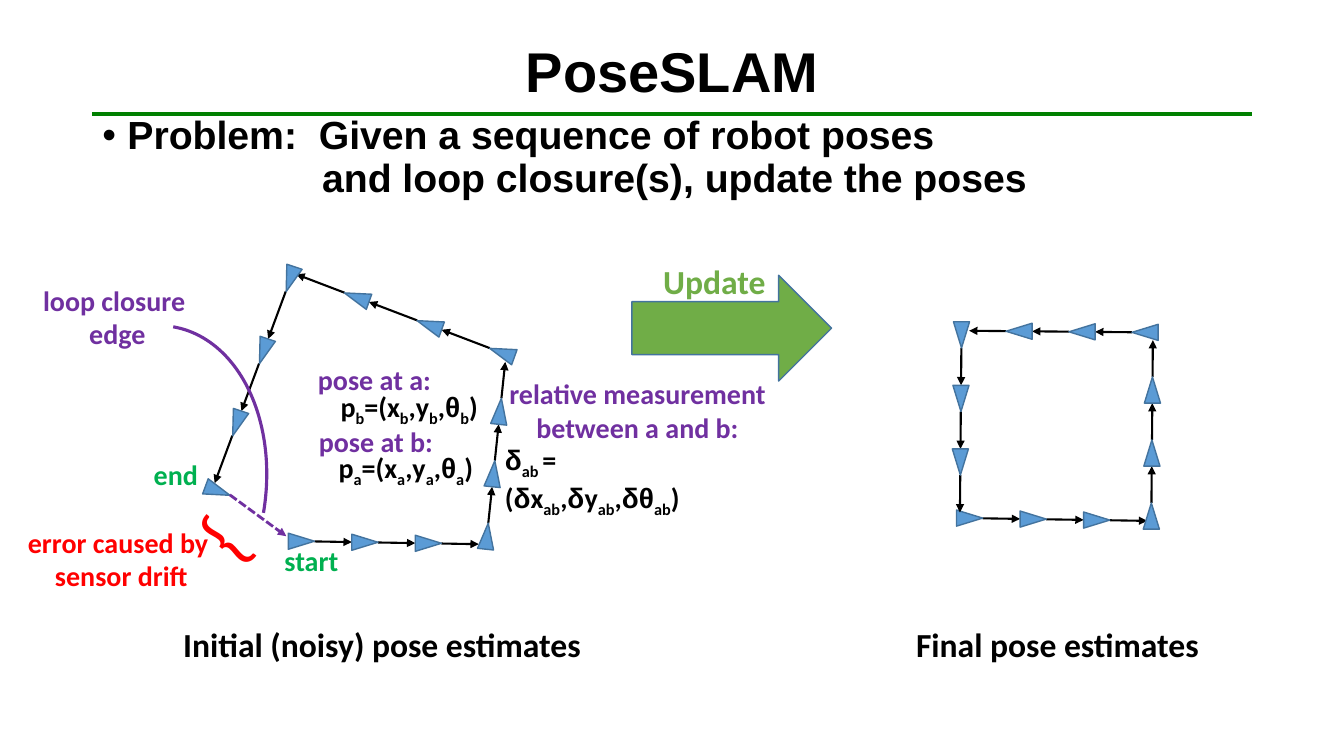
"""Build the PoseSLAM slide with noisy and final pose loops."""
from dataclasses import dataclass
from math import hypot

from pptx import Presentation
from pptx.dml.color import RGBColor
from pptx.enum.dml import MSO_LINE
from pptx.enum.shapes import MSO_CONNECTOR, MSO_SHAPE
from pptx.enum.text import MSO_ANCHOR, PP_ALIGN
from pptx.oxml.ns import qn
from pptx.shapes.autoshape import Shape
from pptx.shapes.connector import Connector
from pptx.slide import Slide
from pptx.text.text import TextFrame
from pptx.util import Pt
from lxml.etree import SubElement

BLACK, BLUE, EDGE = "000000", "5B9BD5", "43739E"
PURPLE, RED, GREEN, LEAF = "7030A0", "FF0000", "00B050", "70AD47"
LEFT, MID = PP_ALIGN.LEFT, PP_ALIGN.CENTER
POSE_WIDE, POSE_TALL = 11.5, 18.7
POSE_COUNT = 3


@dataclass
class Side:
    """One side of a loop: first pose centre, step to the next, and turn."""
    x: float
    y: float
    dx: float
    dy: float
    turn: float


@dataclass
class Label:
    """A text box; a bar splits runs and an underscore marks a subscript."""
    text: str
    left: float
    top: float
    width: float
    height: float
    tint: str = BLACK
    align: PP_ALIGN = MID
    size: float = 20
    bold: bool = True
    face: str = "Calibri"
    turn: float = 0


SIDES = [
    Side(215.3, 386.6, 45.35, 0.75, 90),
    Side(347.8, 383, 4.7, -44.6, 5.9),
    Side(358.6, 252, -51.9, -19.8, 289.8),
    Side(207.4, 199.4, -19.1, 51.5, 198.5),
    Side(692.6, 370.1, 45.4, 0.7, 90),
    Side(822.4, 368.6, 0.4, -45, 0),
    Side(817.9, 237.4, -45, -0.4, 270),
    Side(686.8, 239.2, -0.4, 45.4, 180),
]

LABELS = [
    Label("δ|_ab |=\n(|δ|x|_ab|,|δ|y|_ab|,|δθ|_ab|)", 353.5, 312.5, 179.3, 47.5, align=LEFT),
    Label("p|_a|=(x|_a|,y|_a|,|θ|_a|)", 234.7, 318.2, 113.8, 31.7, align=LEFT),
    Label("p|_b|=(x|_b|,y|_b|,|θ|_b|)", 236.2, 275, 116.6, 31.7, align=LEFT),
    Label("error caused by \nsensor drift", 12.2, 371.5, 149, 55.4, RED),
    Label("{", 142.6, 346.3, 31.7, 72.7, RED, LEFT, 54, False, turn=309.8),
    Label("loop closure \nedge", 23, 198.7, 121.7, 55.4, PURPLE),
    Label("start", 195.8, 384.5, 53.3, 31.7, GREEN),
    Label("end", 102.2, 323.3, 46.8, 31.7, GREEN),
    Label("Initial (noisy) pose estimates", 123.8, 442.1, 302.4, 36, align=LEFT, size=24),
    Label("Final pose estimates", 647.3, 442.1, 218.9, 36, align=LEFT, size=24),
    Label("Update", 466.6, 182.9, 88.6, 36, LEAF, LEFT, 24),
    Label("relative measurement\nbetween a and b:", 355.7, 265.7, 199.4, 55.4, PURPLE),
    Label("pose at a:", 219.6, 255.6, 95.8, 31.7, PURPLE),
    Label("pose at b:", 220.3, 299.5, 96.5, 31.7, PURPLE),
]

TITLE = Label("PoseSLAM", 66, 0.7, 828, 104.4, size=40, face="Arial")
BODY = Label("Problem:  Given a sequence of robot poses\nand loop closure(s), update the poses",
             66, 79.2, 787, 407.5, align=LEFT, size=28, face="Arial")


def paint(tint: str) -> RGBColor:
    """Turn a hex string into a colour."""
    return RGBColor.from_string(tint)


def draw_label(slide: Slide, label: Label) -> TextFrame:
    """Add a text box and format its runs."""
    box = slide.shapes.add_textbox(Pt(label.left), Pt(label.top), Pt(label.width), Pt(label.height))
    box.rotation = label.turn
    frame = box.text_frame
    frame.word_wrap = label.align == LEFT
    frame.text = label.text
    for line in frame.paragraphs:
        line.alignment = label.align
        parts = line.text.split("|")
        line.text = parts[0]
        for part in parts[1:]:
            line.add_run().text = part.lstrip("_")
        for run, part in zip(line.runs, parts):
            font = run.font
            font.size, font.bold = Pt(label.size), label.bold
            font.name = "Arial" if part[0] in "δθ" else label.face
            font.color.rgb = paint(label.tint)
            if part.startswith("_"):
                run._r.get_or_add_rPr().set("baseline", "-25000")
    return frame


def draw_shape(slide: Slide, kind: MSO_SHAPE, left: float, top: float, width: float,
               height: float, fill: str = "", edge: str = EDGE, weight: float = 1,
               turn: float = 0) -> Shape:
    """Add a preset shape, hollow when no fill is given."""
    shape = slide.shapes.add_shape(kind, Pt(left), Pt(top), Pt(width), Pt(height))
    shape.shadow.inherit = False
    shape.rotation = turn
    if fill:
        shape.fill.solid()
        shape.fill.fore_color.rgb = paint(fill)
    else:
        shape.fill.background()
    shape.line.color.rgb = paint(edge)
    shape.line.width = Pt(weight)
    return shape


def draw_pose(slide: Slide, x: float, y: float, turn: float) -> None:
    """Add a pose marker centred at a point."""
    draw_shape(slide, MSO_SHAPE.ISOSCELES_TRIANGLE, x - POSE_WIDE / 2, y - POSE_TALL / 2,
               POSE_WIDE, POSE_TALL, BLUE, turn=turn)


def draw_line(slide: Slide, x1: float, y1: float, x2: float, y2: float,
              tint: str = BLACK, weight: float = 1.5, arrow: bool = True) -> Connector:
    """Add a straight line, with an arrowhead if asked."""
    line = slide.shapes.add_connector(MSO_CONNECTOR.STRAIGHT, Pt(x1), Pt(y1), Pt(x2), Pt(y2))
    line.line.color.rgb = paint(tint)
    line.line.width = Pt(weight)
    if arrow:
        SubElement(line.line._get_or_add_ln(), qn("a:tailEnd"), type="triangle")
    SubElement(line._element.spPr, qn("a:effectLst"))
    return line


def draw_side(slide: Slide, side: Side) -> None:
    """Add the poses of a side, each with an arrow to the next."""
    gap = POSE_TALL / 2 / hypot(side.dx, side.dy)
    for step in range(POSE_COUNT):
        x, y = side.x + step * side.dx, side.y + step * side.dy
        draw_line(slide, x + gap * side.dx, y + gap * side.dy,
                  x + (1 - gap) * side.dx, y + (1 - gap) * side.dy)
        draw_pose(slide, x, y, side.turn)


def draw_head(slide: Slide) -> None:
    """Add the title, its rule and the problem statement."""
    draw_line(slide, 66, 81.4, 894, 81.4, "008000", 3, arrow=False)
    title = draw_label(slide, TITLE)
    title.vertical_anchor = MSO_ANCHOR.MIDDLE
    body = draw_label(slide, BODY)
    for line in (*title.paragraphs, *body.paragraphs):
        line.line_spacing = 0.9
    first, second = (line._p.get_or_add_pPr() for line in body.paragraphs)
    first.set("marL", str(Pt(18)))
    first.set("indent", str(Pt(-18)))
    SubElement(first, qn("a:buFont"), typeface="Arial")
    SubElement(first, qn("a:buChar"), char="•")
    second.set("marL", str(Pt(157)))


def main() -> None:
    """Draw the slide and save it."""
    deck = Presentation()
    deck.slide_width, deck.slide_height = Pt(960), Pt(540)
    slide = deck.slides.add_slide(deck.slide_layouts[6])
    draw_head(slide)
    for side in SIDES:
        draw_side(slide, side)
    draw_pose(slide, 155.5, 350.6, 110.1)
    closure = draw_line(slide, 164.2, 353.5, 204.5, 383, PURPLE, 2)
    closure.line.dash_style = MSO_LINE.SQUARE_DOT
    draw_shape(slide, MSO_SHAPE.RIGHT_ARROW, 451.4, 196.6, 142.6, 75.6, LEAF)
    draw_shape(slide, MSO_SHAPE.ARC, 18, 231.8, 171.4, 240.5, edge=PURPLE, weight=2.25, turn=9.6)
    for label in LABELS:
        draw_label(slide, label)
    deck.save("out.pptx")


if __name__ == "__main__":
    main()
